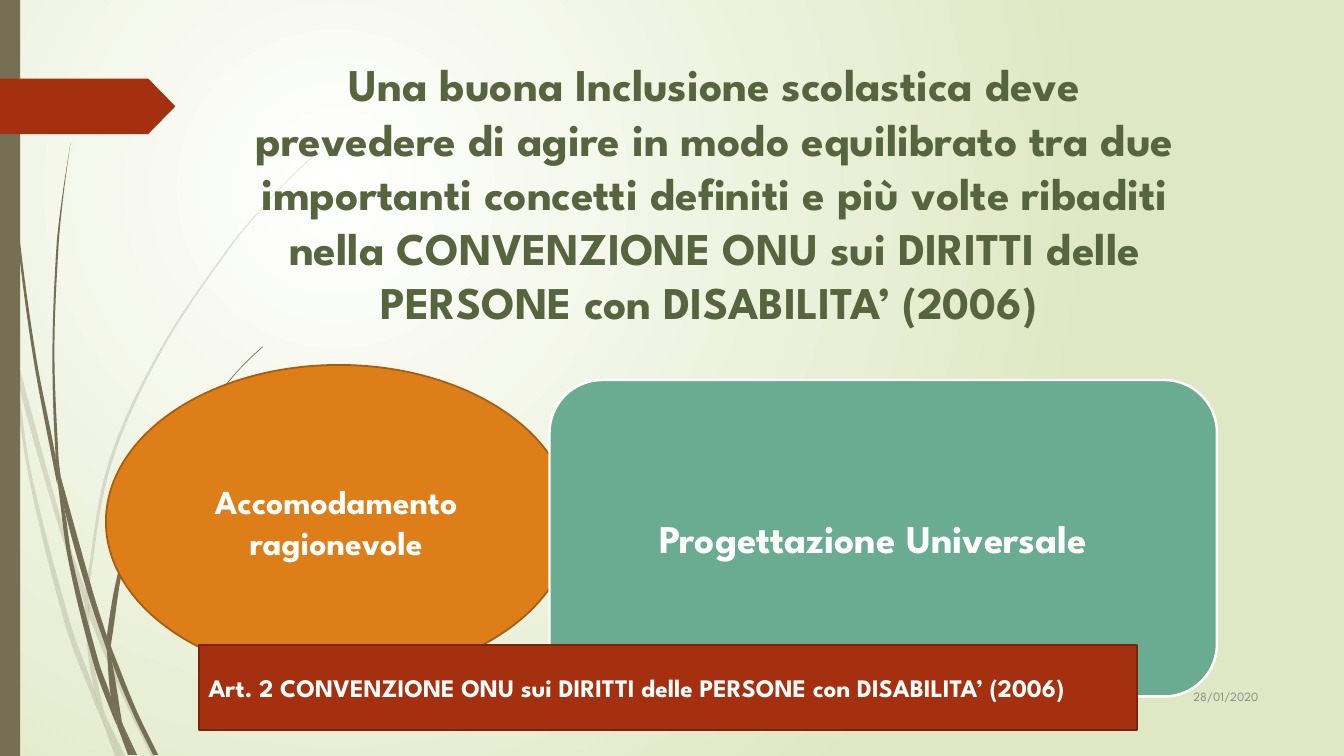
import math

import lxml.etree
import pptx
import pptx.dml.color
import pptx.enum.shapes
import pptx.enum.text
import pptx.oxml.ns
import pptx.util

Inches = pptx.util.Inches
qn = pptx.oxml.ns.qn
SHAPES = pptx.enum.shapes.MSO_SHAPE
ALIGN = pptx.enum.text.PP_ALIGN
ANCHOR = pptx.enum.text.MSO_ANCHOR
FONT = "League Spartan"
OLIVE = "766F54"
RUST = "A53010"
WHITE = "FFFFFF"

# Each piece of grass is a pair of edges running the same way.
PALE_GRASS = [
    ([(0, 2.82), (0.09, 3.22), (0.11, 3.5)], [(0, 2.99), (0.1, 3.44), (0.11, 3.5)]),
    ([(0.14, 3.45), (0.62, 5.2), (0.85, 5.86)],
     [(0.14, 3.45), (0.17, 3.76), (0.58, 5.22), (0.84, 5.99)]),
    ([(0.88, 5.96), (0.92, 6.07), (1.27, 6.92), (1.55, 7.5)],
     [(0.88, 5.96), (0.88, 6.1), (1.23, 6.94), (1.5, 7.5)]),
    ([(1.05, 7.11), (1.24, 7.5)], [(1.05, 7.11), (1.19, 7.5)]),
    ([(0.11, 3.5), (0.17, 3.76), (0.31, 4.69), (0.7, 6.19), (0.93, 6.83),
      (0.99, 7.07), (1.01, 7.14)],
     [(0.11, 3.5), (0.28, 4.7), (0.65, 6.21), (0.92, 6.93), (1.01, 7.14)]),
    ([(0.84, 5.99), (0.87, 6.46), (0.93, 6.83), (0.96, 6.92), (1.05, 7.11)],
     [(0.84, 5.99), (0.88, 6.1), (0.91, 6.46), (1.03, 7.06), (1.05, 7.11)]),
    ([(3.12, 1.53), (2.89, 1.75), (2.68, 1.97), (2.28, 2.44), (1.58, 3.48),
      (1.07, 4.61), (0.85, 5.84), (0.85, 5.86)],
     [(3.12, 1.54), (2.9, 1.75), (2.68, 1.98), (2.29, 2.45), (1.6, 3.49),
      (1.1, 4.62), (0.88, 5.84), (0.88, 5.96)]),
    ([(1.01, 7.14), (1.14, 7.5)], [(1.01, 7.14), (1.19, 7.5)]),
    ([(0.85, 5.86), (0.84, 5.99), (0.88, 6.08)],
     [(0.85, 5.86), (0.88, 5.96), (0.88, 6.1)]),
    ([(0.93, 6.83), (0.99, 7.07), (1.01, 7.14), (1.19, 7.5)],
     [(0.93, 6.83), (0.96, 6.92), (1.05, 7.11), (1.19, 7.5)]),
]
DARK_GRASS = [
    ([(0.03, 0), (0.04, 0.48), (0.07, 1.1), (0.17, 2.33), (0.33, 3.55),
      (0.56, 4.77), (0.57, 4.81)],
     [(0.04, 0), (0.05, 0.48), (0.08, 1.09), (0.19, 2.32), (0.36, 3.55),
      (0.55, 4.53), (0.57, 4.81)]),
    ([(0.6, 4.72), (0.93, 5.9), (1.06, 6.31)],
     [(0.6, 4.72), (0.64, 5.05), (0.88, 5.92), (1.06, 6.45)]),
    ([(1.1, 6.41), (1.13, 6.49), (1.36, 7.06), (1.57, 7.49)],
     [(1.1, 6.41), (1.11, 6.56), (1.32, 7.08), (1.52, 7.49)]),
    ([(0.57, 4.77), (0.64, 5.05), (0.72, 5.56), (0.98, 6.57), (1.1, 6.91),
      (1.16, 7.17), (1.17, 7.22)],
     [(0.57, 4.77), (0.68, 5.57), (0.93, 6.59), (1.11, 7.08), (1.17, 7.22)]),
    ([(0.7, 1.41), (0.62, 1.93), (0.56, 2.45), (0.52, 3.49), (0.55, 4.49), (0.6, 4.72)],
     [(0.7, 1.41), (0.63, 1.93), (0.58, 2.45), (0.54, 3.49), (0.58, 4.53), (0.6, 4.72)]),
    ([(1.22, 7.19), (1.36, 7.49)], [(1.22, 7.19), (1.33, 7.49)]),
    ([(0.55, 4.49), (0.6, 4.72), (0.64, 5.05)],
     [(0.55, 4.49), (0.55, 4.53), (0.57, 4.77), (0.64, 5.05)]),
    ([(2.6, 3.44), (2.45, 3.58), (2.31, 3.73), (2.04, 4.05), (1.56, 4.74),
      (1.22, 5.51), (1.06, 6.31), (1.1, 6.41)],
     [(2.61, 3.44), (2.45, 3.59), (2.31, 3.74), (2.05, 4.06), (1.58, 4.76),
      (1.25, 5.52), (1.11, 6.33), (1.1, 6.41)]),
    ([(1.17, 7.22), (1.27, 7.49)], [(1.17, 7.22), (1.31, 7.49)]),
    ([(1.06, 6.45), (1.1, 6.91), (1.16, 7.06), (1.22, 7.19)],
     [(1.06, 6.45), (1.11, 6.56), (1.21, 7.16), (1.22, 7.19)]),
    ([(1.06, 6.31), (1.06, 6.45), (1.11, 6.56)], [(1.06, 6.31), (1.1, 6.41), (1.11, 6.56)]),
    ([(1.1, 6.91), (1.16, 7.17), (1.17, 7.22), (1.3, 7.49)],
     [(1.1, 6.91), (1.16, 7.06), (1.22, 7.19), (1.33, 7.49)]),
]


def color(hex_code):
    return pptx.dml.color.RGBColor.from_string(hex_code)


def paint(shape, fill, line=None, line_width=1.25):
    shape.shadow.inherit = False
    shape.fill.solid()
    shape.fill.fore_color.rgb = color(fill)
    if line:
        shape.line.color.rgb = color(line)
        shape.line.width = pptx.util.Pt(line_width)
    else:
        shape.line.fill.background()


def write(shape, text, size, font_color, align, anchor, bold=True):
    frame = shape.text_frame
    frame.word_wrap = True
    frame.vertical_anchor = anchor
    frame.text = text
    paragraph = frame.paragraphs[0]
    paragraph.alignment = align
    font = paragraph.runs[0].font
    font.name = FONT
    font.size = pptx.util.Pt(size)
    font.bold = bold
    font.color.rgb = color(font_color)


def add_block(slide, preset, box, fill, line=None, line_width=1.25):
    block = slide.shapes.add_shape(preset, *map(Inches, box))
    paint(block, fill, line, line_width)
    return block


def add_label(slide, box, text, size, font_color, align, anchor, bold):
    label = slide.shapes.add_textbox(*map(Inches, box))
    write(label, text, size, font_color, align, anchor, bold)


def curve_handles(edge):
    """Return the two Bezier handles of every segment of a smooth edge."""
    headings = [math.atan2(after[1] - before[1], after[0] - before[0])
                for before, after in zip([edge[0], *edge[:-1]], [*edge[1:], edge[-1]])]
    handles = []
    for i, (start, end) in enumerate(zip(edge, edge[1:])):
        reach = math.dist(start, end) / 3
        handles.append([
            (x + sign * reach * math.cos(heading), y + sign * reach * math.sin(heading))
            for (x, y), sign, heading in ((start, 1, headings[i]), (end, -1, headings[i + 1]))])
    return handles


def add_grass(slide, edges, opacity=100):
    there, back = edges[0], edges[1][::-1]
    outline = [(Inches(x), Inches(y)) for x, y in there + back]
    builder = slide.shapes.build_freeform(*outline[0])
    builder.add_line_segments(outline[1:], close=True)
    grass = builder.convert_to_shape()
    paint(grass, OLIVE)

    segments = grass._element.findall(".//" + qn("a:lnTo"))
    bends = curve_handles(there) + [None] + curve_handles(back)
    for segment, bend in zip(segments, bends):
        if bend:
            segment.tag = qn("a:cubicBezTo")
            for i, (x, y) in enumerate(bend):
                handle = lxml.etree.Element(qn("a:pt"))
                handle.set("x", str(Inches(x) - grass.left))
                handle.set("y", str(Inches(y) - grass.top))
                segment.insert(i, handle)
    if opacity < 100:
        tint = grass.fill._xPr.find(".//" + qn("a:srgbClr"))
        lxml.etree.SubElement(tint, qn("a:alpha")).set("val", str(opacity * 1000))


def set_radial_background(slide, inner, outer):
    fill = slide.background.fill
    fill.gradient()
    for stop, position, shade in zip(fill.gradient_stops, (0, 1), (inner, outer)):
        stop.position = position
        stop.color.rgb = color(shade)
    linear = slide.background._cSld.find(".//" + qn("a:lin"))
    radial = lxml.etree.Element(qn("a:path"))
    radial.set("path", "circle")
    focus = lxml.etree.SubElement(radial, qn("a:fillToRect"))
    for side, value in zip("ltrb", (50, 50, 100, 100)):
        focus.set(side, str(value * 1000))
    linear.getparent().replace(linear, radial)


def main():
    deck = pptx.Presentation()
    deck.slide_width, deck.slide_height = Inches(13.33), Inches(7.5)
    slide = deck.slides.add_slide(deck.slide_layouts[6])
    set_radial_background(slide, WHITE, "DFE8C4")
    for edges in PALE_GRASS:
        add_grass(slide, edges, opacity=20)
    for edges in DARK_GRASS:
        add_grass(slide, edges)
    add_block(slide, SHAPES.RECTANGLE, (0, 0, 0.2, 7.5), OLIVE)
    arrow_tab = add_block(slide, SHAPES.PENTAGON, (0, 0.78, 1.74, 0.55), RUST)
    arrow_tab.adjustments[0] = 0.49

    add_label(slide, (2.34, 0.51, 9.5, 3.25),
              "Una buona Inclusione scolastica deve prevedere di agire in modo "
              "equilibrato tra due importanti concetti definiti e più volte ribaditi "
              "nella CONVENZIONE ONU sui DIRITTI delle PERSONE con DISABILITA’ (2006) ",
              32.4, "56653E", ALIGN.CENTER, ANCHOR.TOP, bold=True)
    add_label(slide, (11.33, 6.7, 1.25, 0.41), "28/01/2020",
              9, "8C8C8C", ALIGN.RIGHT, ANCHOR.MIDDLE, bold=False)

    accommodation = add_block(slide, SHAPES.OVAL, (1.05, 3.62, 4.62, 3.11),
                              "DE7E18", "A45D12")
    write(accommodation, "Accomodamento ragionevole", 24, WHITE, ALIGN.CENTER, ANCHOR.MIDDLE)
    accommodation.text_frame.margin_right = Inches(0.15)
    universal_design = add_block(slide, SHAPES.ROUNDED_RECTANGLE,
                                 (5.45, 3.77, 6.62, 3.14), "6AAC91", WHITE, 1.75)
    write(universal_design, "Progettazione Universale", 28, WHITE, ALIGN.CENTER, ANCHOR.MIDDLE)
    universal_design.text_frame.margin_right = Inches(0.3)
    article = add_block(slide, SHAPES.RECTANGLE, (1.97, 6.4, 9.31, 0.84), RUST, "7A240C")
    write(article, "Art. 2 CONVENZIONE ONU sui DIRITTI delle PERSONE con DISABILITA’ (2006)",
          18, WHITE, ALIGN.LEFT, ANCHOR.MIDDLE)
    deck.save("out.pptx")


if __name__ == "__main__":
    main()
